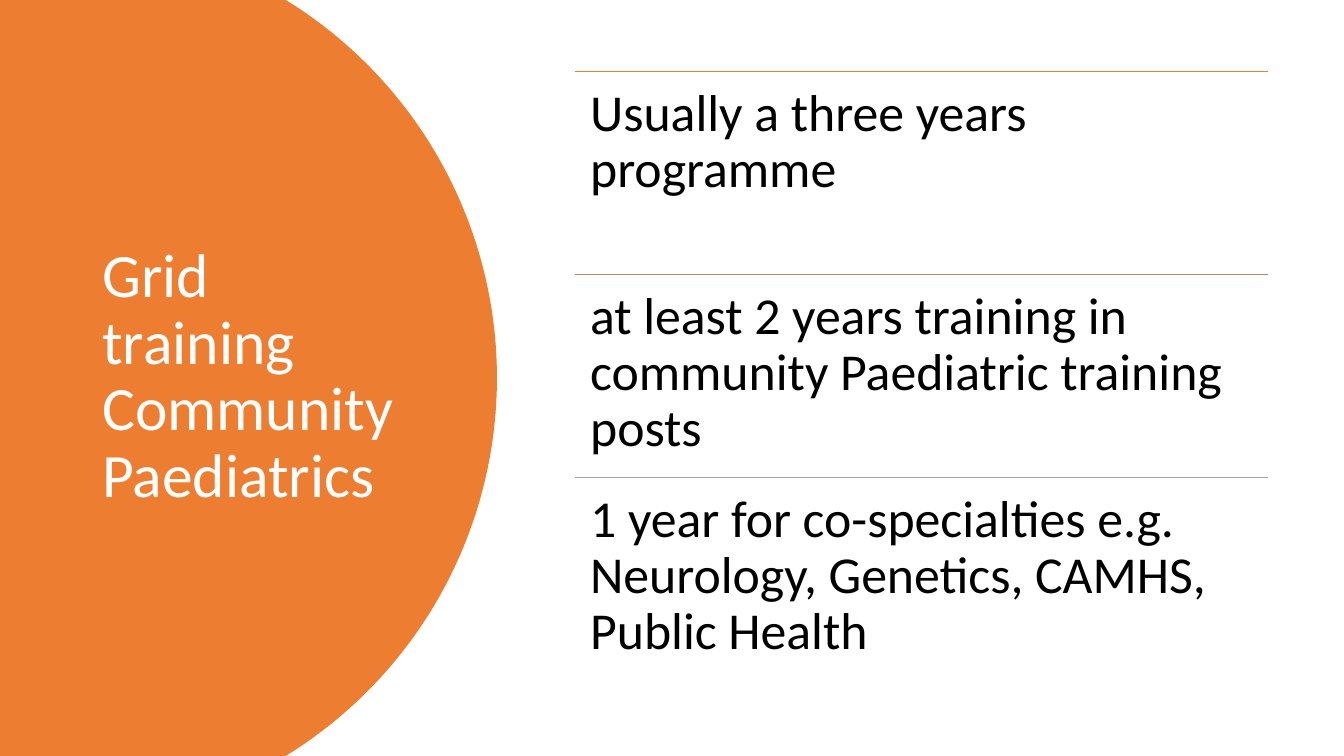
import math
from dataclasses import dataclass

from lxml import etree
from pptx import Presentation
from pptx.dml.color import RGBColor
from pptx.enum.shapes import MSO_CONNECTOR
from pptx.enum.text import MSO_ANCHOR, PP_ALIGN
from pptx.oxml.ns import qn
from pptx.util import Pt

STRAIGHT = MSO_CONNECTOR.STRAIGHT
TOP, MIDDLE = MSO_ANCHOR.TOP, MSO_ANCHOR.MIDDLE
LEFT = PP_ALIGN.LEFT


@dataclass(frozen=True)
class Theme:
    font: str = "Calibri"
    title_size: int = 44
    body_size: int = 37
    orange: RGBColor = RGBColor(0xED, 0x7D, 0x31)
    rust: RGBColor = RGBColor(0xC4, 0x81, 0x70)
    gray: RGBColor = RGBColor(0xA5, 0xA5, 0xA5)
    white: RGBColor = RGBColor(0xFF, 0xFF, 0xFF)
    black: RGBColor = RGBColor(0, 0, 0)


theme = Theme()
SLIDE_WIDTH, SLIDE_HEIGHT = 960, 540

presentation = Presentation()
presentation.slide_width = Pt(SLIDE_WIDTH)
presentation.slide_height = Pt(SLIDE_HEIGHT)
slide = presentation.slides.add_slide(presentation.slide_layouts[6])


def add_text(text, left, top, width, height, size, color, anchor, inset_x, inset_y):
    box = slide.shapes.add_textbox(Pt(left), Pt(top), Pt(width), Pt(height))
    frame = box.text_frame
    frame.word_wrap = True
    frame.vertical_anchor = anchor
    frame.margin_left = frame.margin_right = Pt(inset_x)
    frame.margin_top = frame.margin_bottom = Pt(inset_y)
    paragraph = frame.paragraphs[0]
    paragraph.alignment = LEFT
    paragraph.line_spacing = 0.9
    run = paragraph.add_run()
    run.text = text
    run.font.name = theme.font
    run.font.size = Pt(size)
    run.font.color.rgb = color


# Orange panel: its right edge is an arc from the top of the slide to the bottom
ARC_CENTER_X, ARC_RADIUS, ARC_STEPS = 38, 317, 80
middle_y = SLIDE_HEIGHT / 2
half_angle = math.asin(middle_y / ARC_RADIUS)
arc_points = []
for step in range(ARC_STEPS + 1):
    angle = half_angle * (2 * step / ARC_STEPS - 1)
    arc_points.append((
        Pt(ARC_CENTER_X + ARC_RADIUS * math.cos(angle)),
        Pt(middle_y + ARC_RADIUS * math.sin(angle)),
    ))
builder = slide.shapes.build_freeform(0, 0)
builder.add_line_segments(arc_points + [(0, Pt(SLIDE_HEIGHT))], close=True)
panel = builder.convert_to_shape()
panel.shadow.inherit = False
panel.fill.solid()
panel.fill.fore_color.rgb = theme.orange
panel.line.fill.background()

add_text("Grid training Community Paediatrics", 66, 50.5, 232.5, 438.5,
         theme.title_size, theme.white, MIDDLE, 7.2, 3.6)

# Three ruled rows of equal height
ROW_LEFT, ROW_TOP, ROW_WIDTH, ROW_HEIGHT = 410.5, 51, 495, 145
rows = [
    ("Usually a three years programme", theme.orange),
    ("at least 2 years training in community Paediatric training posts", theme.rust),
    ("1 year for co-specialties e.g. Neurology, Genetics, CAMHS, Public Health", theme.gray),
]
for index, (text, rule_color) in enumerate(rows):
    top = ROW_TOP + index * ROW_HEIGHT
    rule = slide.shapes.add_connector(
        STRAIGHT, Pt(ROW_LEFT), Pt(top), Pt(ROW_LEFT + ROW_WIDTH), Pt(top))
    rule.line.color.rgb = rule_color
    rule.line.width = Pt(1)
    etree.SubElement(rule._element.spPr, qn("a:effectLst"))
    add_text(text, ROW_LEFT, top, ROW_WIDTH, ROW_HEIGHT,
             theme.body_size, theme.black, TOP, 11, 11)

presentation.save("out.pptx")
